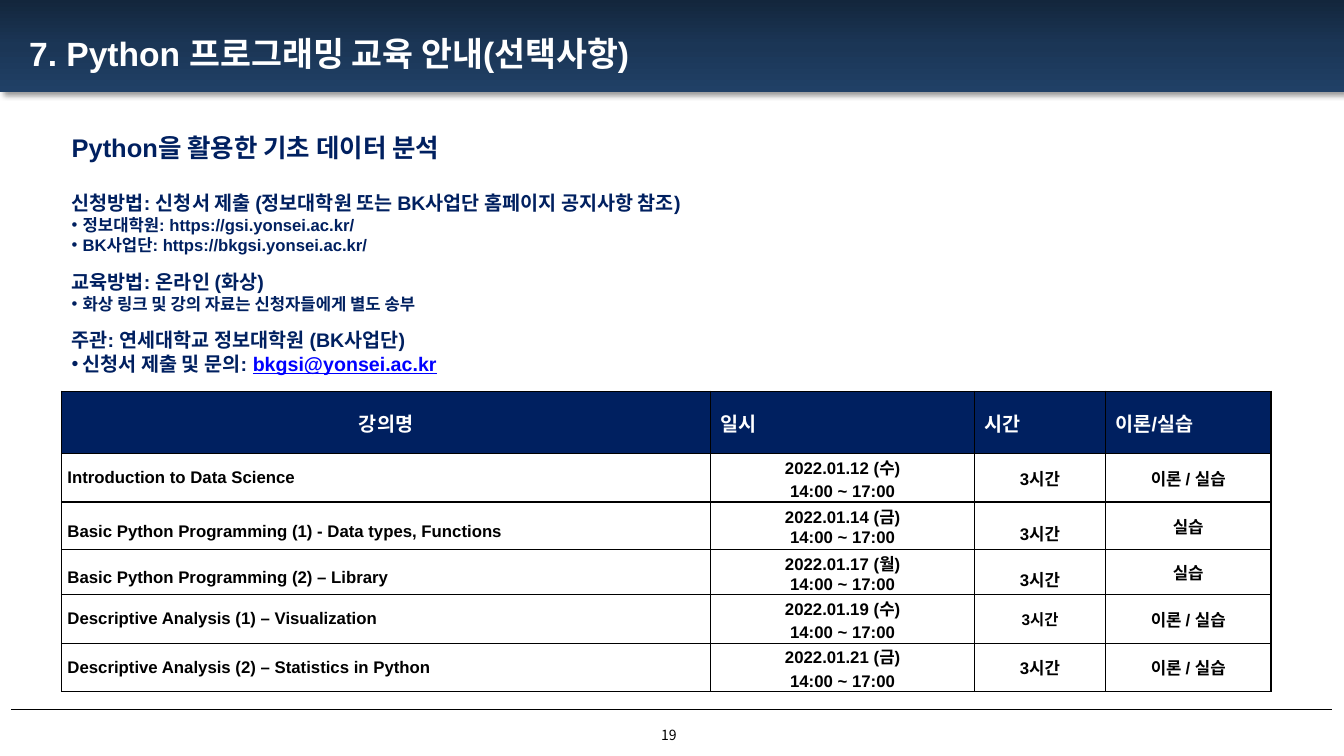
from lxml import etree
from pptx import Presentation
from pptx import util as u
from pptx.dml.color import RGBColor
from pptx.enum import shapes, text
from pptx.oxml import ns

COLORS = {
    "navy": "002060", "white": "FFFFFF", "black": "000000", "link": "0000FF",
    "bar_top": "13263C", "bar_middle": "1B3656", "bar_bottom": "204066",
}
TITLE = "7. Python 프로그래밍 교육 안내(선택사항)"
EMAIL = "bkgsi@yonsei.ac.kr"
GUIDE = [
    ("Python을 활용한 기초 데이터 분석", 18.2, 0, False),
    ("신청방법: 신청서 제출 (정보대학원 또는 BK사업단 홈페이지 공지사항 참조)", 14, 19.5, False),
    ("정보대학원: https://gsi.yonsei.ac.kr/", 11.9, 0, True),
    ("BK사업단: https://bkgsi.yonsei.ac.kr/", 11.9, 0, True),
    ("교육방법: 온라인 (화상)", 14, 10.5, False),
    ("화상 링크 및 강의 자료는 신청자들에게 별도 송부", 11.9, 0, True),
    ("주관: 연세대학교 정보대학원 (BK사업단)", 14, 10, False),
    ("신청서 제출 및 문의: ", 14, 0, True),
]
HEADERS = ["강의명", "일시", "시간", "이론/실습"]
HOURS = "14:00 ~ 17:00"
COURSES = [
    ("Introduction to Data Science", "2022.01.12 (수)", "이론 / 실습"),
    ("Basic Python Programming (1) - Data types, Functions", "2022.01.14 (금)", "실습"),
    ("Basic Python Programming (2) – Library", "2022.01.17 (월)", "실습"),
    ("Descriptive Analysis (1) – Visualization", "2022.01.19 (수)", "이론 / 실습"),
    ("Descriptive Analysis (2) – Statistics in Python", "2022.01.21 (금)", "이론 / 실습"),
]
COLUMN_WIDTHS = [16.36, 6.65, 3.3, 4.17]
ROW_HEIGHTS = [1.57, 1.22, 1.2, 1.14, 1.22, 1.22]


def rgb(name):
    """Return the named colour."""
    return RGBColor.from_string(COLORS[name])


def add_xml(parent, tag, **attributes):
    """Append a DrawingML element and return it."""
    return etree.SubElement(parent, ns.qn(tag), attributes)


def style(font, size, color, bold=True, name="Arial"):
    """Set the look of a run or paragraph font."""
    font.name, font.size, font.bold = name, u.Pt(size), bold
    font.color.rgb = rgb(color)


def place(shape, box):
    """Move a shape to a box given in centimetres."""
    shape.left, shape.top, shape.width, shape.height = (u.Cm(n) for n in box)


def draw_header(page, box):
    """Draw the gradient bar and the title on it."""
    left, top, width, height = box
    title = page.shapes.title
    bar = page.shapes.add_shape(shapes.MSO_SHAPE.RECTANGLE, *(u.Cm(n) for n in box))
    title.element.addprevious(bar.element)
    bar.fill.gradient()
    bar.fill.gradient_angle = 270
    stops = bar.element.spPr.find(".//" + ns.qn("a:gsLst"))
    for stop in list(stops):
        stops.remove(stop)
    for position, name in ((0, "bar_top"), (50000, "bar_middle"), (100000, "bar_bottom")):
        stop = add_xml(stops, "a:gs", pos=str(position))
        add_xml(stop, "a:srgbClr", val=COLORS[name])
    bar.line.fill.background()
    bar.shadow.inherit = False
    effects = bar.element.spPr.find(ns.qn("a:effectLst"))
    shadow = add_xml(effects, "a:outerShdw", blurRad=str(u.Pt(4)), dist=str(u.Pt(3)),
                     dir="2700000", algn="tl", rotWithShape="0")
    add_xml(add_xml(shadow, "a:srgbClr", val=COLORS["black"]), "a:alpha", val="40000")

    place(title, (left + 0.48, top + 0.74, 22.58, 1.17))
    frame = title.text_frame
    frame.text = TITLE
    frame.auto_size = text.MSO_AUTO_SIZE.NONE
    frame.vertical_anchor = text.MSO_ANCHOR.MIDDLE
    para = frame.paragraphs[0]
    para.alignment = text.PP_ALIGN.LEFT
    style(para.runs[0].font, 24, "white")


def draw_guide(page, box):
    """Fill the body placeholder with the application guide."""
    body = page.placeholders[1]
    place(body, box)
    frame = body.text_frame
    frame.auto_size = text.MSO_AUTO_SIZE.NONE
    frame.vertical_anchor = text.MSO_ANCHOR.TOP
    frame.margin_top = u.Cm(0.25)
    for index, (words, size, before, bulleted) in enumerate(GUIDE):
        para = frame.paragraphs[0] if index == 0 else frame.add_paragraph()
        para.text = words
        properties = para._p.get_or_add_pPr()
        indent = u.Cm(0.28) if bulleted else 0
        properties.set("marL", str(indent))
        properties.set("indent", str(-indent))
        if bulleted:
            add_xml(properties, "a:buFont", typeface="Arial")
            add_xml(properties, "a:buChar", char="•")
        else:
            add_xml(properties, "a:buNone")
        para.alignment = text.PP_ALIGN.LEFT
        para.line_spacing = u.Pt(size * 1.22)
        para.space_before = u.Pt(before)
        style(para.runs[0].font, size, "navy")
    address = para.add_run()
    address.text = EMAIL
    style(address.font, size, "link")
    address.font.underline = True


def fill_cell(cell, lines, size, color, align, margins):
    """Write lines into a cell and give it black borders."""
    cell.vertical_anchor = text.MSO_ANCHOR.MIDDLE
    cell.margin_left = cell.margin_right = u.Cm(margins[0])
    cell.margin_top = cell.margin_bottom = u.Cm(margins[1])
    cell.text_frame.text = "\n".join(lines)
    for para in cell.text_frame.paragraphs:
        para.alignment = align
        style(para.runs[0].font, size, color)
    properties = cell._tc.get_or_add_tcPr()
    for side in ("L", "R", "T", "B"):
        border = add_xml(properties, "a:ln" + side, w=str(u.Pt(1)))
        add_xml(add_xml(border, "a:solidFill"), "a:srgbClr", val=COLORS["black"])


def draw_schedule(page, box):
    """Draw the course table."""
    center, left = text.PP_ALIGN.CENTER, text.PP_ALIGN.LEFT
    table = page.shapes.add_table(len(ROW_HEIGHTS), len(COLUMN_WIDTHS),
                                  *(u.Cm(n) for n in box)).table
    for column, width in zip(table.columns, COLUMN_WIDTHS):
        column.width = u.Cm(width)
    for row, height in zip(table.rows, ROW_HEIGHTS):
        row.height = u.Cm(height)
    for index, words in enumerate(HEADERS):
        cell = table.cell(0, index)
        fill_cell(cell, [words], 14, "white", left if index else center, (0.25, 0.13))
        cell.fill.solid()
        cell.fill.fore_color.rgb = rgb("navy")
    for row, (course, date, kind) in enumerate(COURSES, 1):
        programming = row in (2, 3)
        for index, lines in enumerate(([course], [date, HOURS], ["3시간"], [kind])):
            cell = table.cell(row, index)
            size = 11 if (row, index) == (4, 2) else 12
            fill_cell(cell, lines, size, "black", center if index else left, (0.15, 0.02))
            cell.fill.background()
            last = cell.text_frame.paragraphs[-1]
            if programming and index in (0, 2):
                last.line_spacing = 1.6
            elif not programming and index == 1:
                last.space_before = u.Pt(2.4)


def draw_footer(page, box):
    """Draw the rule and the page number under it."""
    left, top, width, height = box
    rule = page.shapes.add_connector(shapes.MSO_CONNECTOR.STRAIGHT, u.Cm(left), u.Cm(top),
                                     u.Cm(left + width), u.Cm(top))
    rule.line.color.rgb = rgb("black")
    rule.line.width = u.Pt(1)
    add_xml(rule.element.spPr, "a:effectLst")
    number = page.shapes.add_textbox(u.Cm(left + width / 2 - 0.56), u.Cm(top + 0.2),
                                     u.Cm(0.97), u.Cm(height - 0.2))
    frame = number.text_frame
    frame.text = "19"
    frame.word_wrap = False
    frame.vertical_anchor = text.MSO_ANCHOR.MIDDLE
    para = frame.paragraphs[0]
    para.alignment = text.PP_ALIGN.CENTER
    para.line_spacing = 0.9
    style(para.runs[0].font, 10, "black", False, "Noto Sans CJK KR")


def main():
    """Build the course guide slide."""
    deck = Presentation()
    deck.slide_width, deck.slide_height = u.Cm(33.87), u.Cm(19.05)
    page = deck.slides.add_slide(deck.slide_layouts[1])
    draw_header(page, (0, 0, 33.87, 2.31))
    draw_schedule(page, (1.55, 9.86, sum(COLUMN_WIDTHS), sum(ROW_HEIGHTS)))
    draw_guide(page, (1.55, 3.07, 30.48, 6.48))
    draw_footer(page, (0.28, 17.88, 33.3, 1.15))
    deck.save("out.pptx")


if __name__ == "__main__":
    main()
